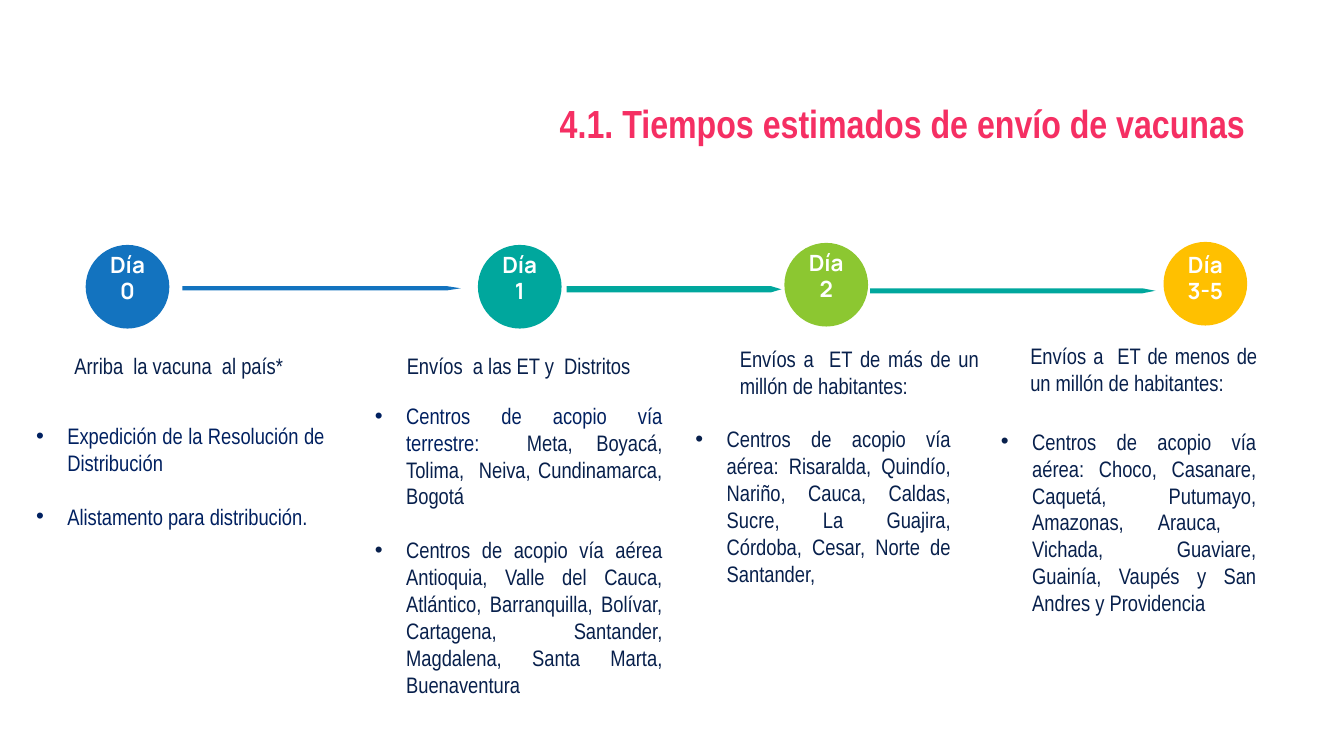
"""Build the timeline slide of estimated vaccine delivery times."""
from lxml.etree import SubElement
from pptx import Presentation
from pptx.dml.color import RGBColor
from pptx.enum.shapes import MSO_SHAPE
from pptx.enum.text import MSO_ANCHOR, PP_ALIGN
from pptx.oxml.ns import qn
from pptx.util import Inches, Pt

PINK = RGBColor(0xF5, 0x2F, 0x63)
BLUE = RGBColor(0x13, 0x73, 0xBF)
TEAL = RGBColor(0x00, 0xA7, 0x9D)
GREEN = RGBColor(0x8C, 0xC7, 0x31)
AMBER = RGBColor(0xFF, 0xC0, 0x00)
NAVY = RGBColor(0x08, 0x20, 0x4C)
INDIGO = RGBColor(0x00, 0x20, 0x60)
WHITE = RGBColor(0xFF, 0xFF, 0xFF)

CELL = 0.1
DISC = 8.3
LABEL_W, LABEL_H = 6.7, 6.4

LEFT, CENTER, RIGHT = PP_ALIGN.LEFT, PP_ALIGN.CENTER, PP_ALIGN.RIGHT
JUSTIFY = PP_ALIGN.JUSTIFY
TOP, BOTTOM = MSO_ANCHOR.TOP, MSO_ANCHOR.BOTTOM

DAYS = [
    ("Día 0", BLUE, 8.5, 24.3, 24.3),
    ("Día 1", TEAL, 47.4, 24.3, 24.3),
    ("Día 2", GREEN, 77.8, 24.1, 24.1),
    ("Día 3-5", AMBER, 115.4, 24, 24.3),
]
ARROWS = [
    (BLUE, 18.1, 28.4, 27.6, 0.4, 1.3),
    (TEAL, 56.2, 28.4, 21.3, 0.6, 1),
    (TEAL, 86.3, 28.6, 28.3, 0.5, 1.3),
]
HEADINGS = [
    ("Arriba  la vacuna  al país*", (6.4, 34.4, 30.6, 3.7), LEFT),
    ("Envíos  a las ET y  Distritos", (38.6, 34.4, 25.7, 3.7), CENTER),
    ("Envíos a  ET de más de un millón de habitantes: ",
     (72.4, 33.7, 25.7, 6.4), JUSTIFY),
    ("Envíos a  ET de menos de un millón de habitantes: ",
     (101.2, 33.4, 24.5, 6.4), JUSTIFY),
]
LISTS = [
    ((2.6, 41.4, 30.6, 11.8), TOP, [
        [("Expedición de la Resolución de Distribución", INDIGO)],
        [("Alistamento para distribución. ", INDIGO)]]),
    ((36.2, 39.1, 30.5, 30.6), BOTTOM, [
        [("Centros de acopio vía terrestre:  ", INDIGO),
         ("Meta, Boyacá, Tolima,  Neiva, Cundinamarca, Bogotá", NAVY)],
        [("Centros de acopio vía aérea Antioquia, Valle del Cauca, "
          "Atlántico, Barranquilla, Bolívar, Cartagena, Santander, "
          "Magdalena, Santa Marta, Buenaventura", NAVY)]]),
    ((68, 41.5, 27.3, 17.2), BOTTOM, [
        [("Centros de acopio vía aérea: Risaralda, Quindío, Nariño, Cauca, "
          "Caldas, Sucre, La Guajira, Córdoba, Cesar, Norte de Santander, ",
          NAVY)]]),
    ((98.3, 41.7, 27.3, 19.9), BOTTOM, [
        [("Centros de acopio vía aérea: Choco, Casanare, Caquetá, Putumayo, "
          "Amazonas, Arauca,  Vichada, Guaviare, Guainía, Vaupés y San "
          "Andres y Providencia", NAVY)]]),
]


def grid(*cells):
    """Turn grid cells into lengths."""
    return [Inches(n * CELL) for n in cells]


def add_text(p, text, color=NAVY, size=16, font="Arial Narrow", bold=False):
    """Append a formatted run to a paragraph."""
    r = p.add_run()
    r.text = text
    r.font.name, r.font.size, r.font.bold = font, Pt(size), bold
    r.font.color.rgb = color


class Board:
    """Hold the style and the current slide."""

    def __init__(self, prs):
        """Add a blank slide to draw on."""
        self.slide = prs.slides.add_slide(prs.slide_layouts[6])
        self.shapes = self.slide.shapes

    def paint(self, sp, color):
        """Give a shape a flat fill."""
        sp.shadow.inherit = False
        sp.fill.solid()
        sp.fill.fore_color.rgb = color
        sp.line.fill.background()

    def frame(self, at, anchor):
        """Add a wrapping text box and return its frame."""
        tf = self.shapes.add_textbox(*grid(*at)).text_frame
        tf.word_wrap, tf.vertical_anchor = True, anchor
        return tf

    def text(self, text, at, align, anchor=BOTTOM, **style):
        """Add a one-paragraph text box."""
        p = self.frame(at, anchor).paragraphs[0]
        p.alignment = align
        add_text(p, text, **style)

    def bullets(self, items, at, anchor):
        """Add a justified bullet list."""
        tf = self.frame(at, anchor)
        for i, runs in enumerate(items):
            p = tf.add_paragraph() if i else tf.paragraphs[0]
            pPr = p._p.get_or_add_pPr()
            pPr.set("marL", str(Inches(0.31)))
            pPr.set("indent", str(Inches(-0.31)))
            SubElement(pPr, qn("a:buFont")).set("typeface", "Arial")
            SubElement(pPr, qn("a:buChar")).set("char", "•")
            p.alignment = JUSTIFY
            if i:
                p.space_before = Pt(19.2)
            for text, color in runs:
                add_text(p, text, color=color)

    def day(self, label, color, x, y, label_y):
        """Add a disc with its day label."""
        sp = self.shapes.add_shape(MSO_SHAPE.OVAL, *grid(x, y, DISC, DISC))
        self.paint(sp, color)
        at = (x + (DISC - LABEL_W) / 2, label_y, LABEL_W, LABEL_H)
        self.text(label, at, CENTER, color=WHITE, font="Manrope", bold=True)

    def arrow(self, color, x, y, w, h, tip):
        """Add a thin bar with a pointed right end."""
        neck = x + w - tip
        points = [(neck, y), (x + w, y + h / 2), (neck, y + h), (x, y + h)]
        fb = self.shapes.build_freeform(*grid(x, y))
        fb.add_line_segments([grid(*pt) for pt in points], close=True)
        self.paint(fb.convert_to_shape(), color)


def main():
    """Draw the slide and save it."""
    prs = Presentation()
    prs.slide_width, prs.slide_height = Inches(13.33), Inches(7.5)
    board = Board(prs)
    board.text("4.1. Tiempos estimados de envío de vacunas ",
               (12.3, 9.4, 113, 10.4), RIGHT, anchor=TOP,
               color=PINK, size=28, bold=True)
    for arrow in ARROWS:
        board.arrow(*arrow)
    for day in DAYS:
        board.day(*day)
    for text, at, align in HEADINGS:
        board.text(text, at, align)
    for at, anchor, items in LISTS:
        board.bullets(items, at, anchor)
    prs.save("out.pptx")


if __name__ == "__main__":
    main()
